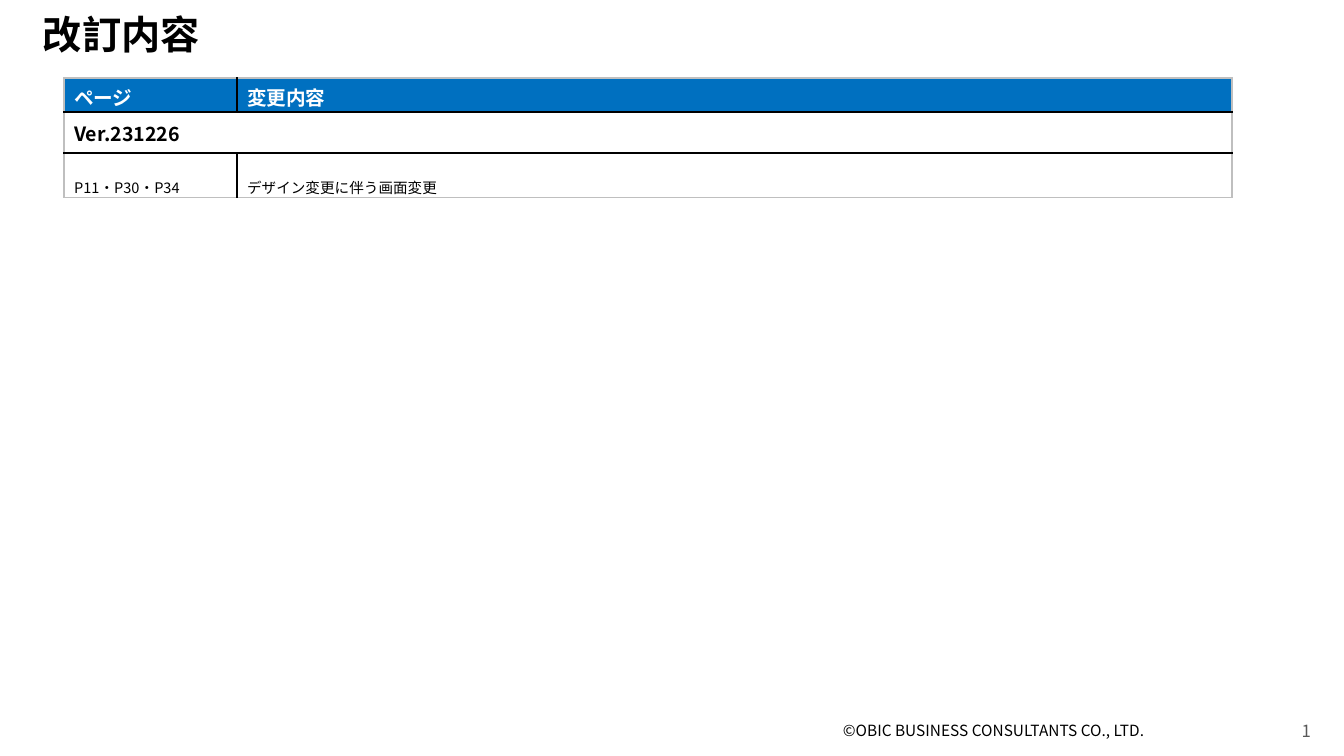
from lxml.etree import SubElement
from pptx import Presentation
from pptx.dml.color import RGBColor
from pptx.enum.text import MSO_ANCHOR as Anchor, PP_ALIGN as Align
from pptx.oxml.ns import qn
from pptx.util import Emu, Pt

SCALE = 914400 / 100.8
FONT = "Noto Sans CJK JP"
BLACK = RGBColor(0, 0, 0)
WHITE = RGBColor(255, 255, 255)
GRAY = RGBColor(0x59, 0x59, 0x59)
BLUE = RGBColor(0x00, 0x70, 0xC0)
FRAME = RGBColor(0xBF, 0xBF, 0xBF)


def px(*lengths):
    return [Emu(round(length * SCALE)) for length in lengths]


def write(frame, text, size=14, color=BLACK, bold=False, align=Align.LEFT, spacing=None, baseline=None):
    frame.word_wrap = True
    paragraph = frame.paragraphs[0]
    paragraph.alignment = align
    paragraph.line_spacing = spacing
    run = paragraph.add_run()
    run.text = text
    run.font.size = Pt(size)
    run.font.bold = bold
    run.font.color.rgb = color
    run.font.name = FONT
    properties = run._r.get_or_add_rPr()
    SubElement(properties, qn("a:ea"), typeface=FONT)
    if baseline:
        properties.set("baseline", str(baseline))


presentation = Presentation()
presentation.slide_width, presentation.slide_height = px(1344, 756)
slide = presentation.slides.add_slide(presentation.slide_layouts[6])

for box, text, style in [
    ((833, 716, 454, 40), "©OBIC BUSINESS CONSULTANTS CO., LTD.", dict(size=11)),
    ((1019, 716, 302, 40), "1", dict(size=12, color=GRAY, align=Align.RIGHT)),
    ((33, 11, 1265, 66), "改訂内容", dict(size=28, bold=True, spacing=0.9)),
]:
    write(slide.shapes.add_textbox(*px(*box)).text_frame, text, **style)

header = dict(color=WHITE, bold=True)
entry = dict(size=18, baseline=-25000)
revisions = [
    (34, BLUE, header, ["ページ", "変更内容"]),
    (41, WHITE, dict(bold=True), ["Ver.231226"]),
    (41, WHITE, entry, ["P11・P30・P34", "デザイン変更に伴う画面変更"]),
]
last_row, last_column = len(revisions) - 1, 1
table = slide.shapes.add_table(len(revisions), 2, *px(64, 78, 1168, 116)).table
for column, width in zip(table.columns, px(173, 995)):
    column.width = width
table.cell(1, 0).merge(table.cell(1, 1))

for row_index, (height, fill, style, texts) in enumerate(revisions):
    table.rows[row_index].height = px(height)[0]
    for column_index, text in enumerate(texts):
        write(table.cell(row_index, column_index).text_frame, text, **style)
    for column_index in range(2):
        cell = table.cell(row_index, column_index)
        cell.vertical_anchor = Anchor.MIDDLE
        properties = cell._tc.get_or_add_tcPr()
        merged = len(texts) == 1
        for edge, outer in [
            ("L", column_index == 0 or merged),
            ("R", column_index == last_column or merged),
            ("T", row_index == 0),
            ("B", row_index == last_row),
        ]:
            line = SubElement(properties, qn(f"a:ln{edge}"), w=str(Pt(1)))
            solid = SubElement(line, qn("a:solidFill"))
            SubElement(solid, qn("a:srgbClr"), val=str(FRAME if outer else BLACK))
        cell.fill.solid()
        cell.fill.fore_color.rgb = fill

presentation.save("out.pptx")
